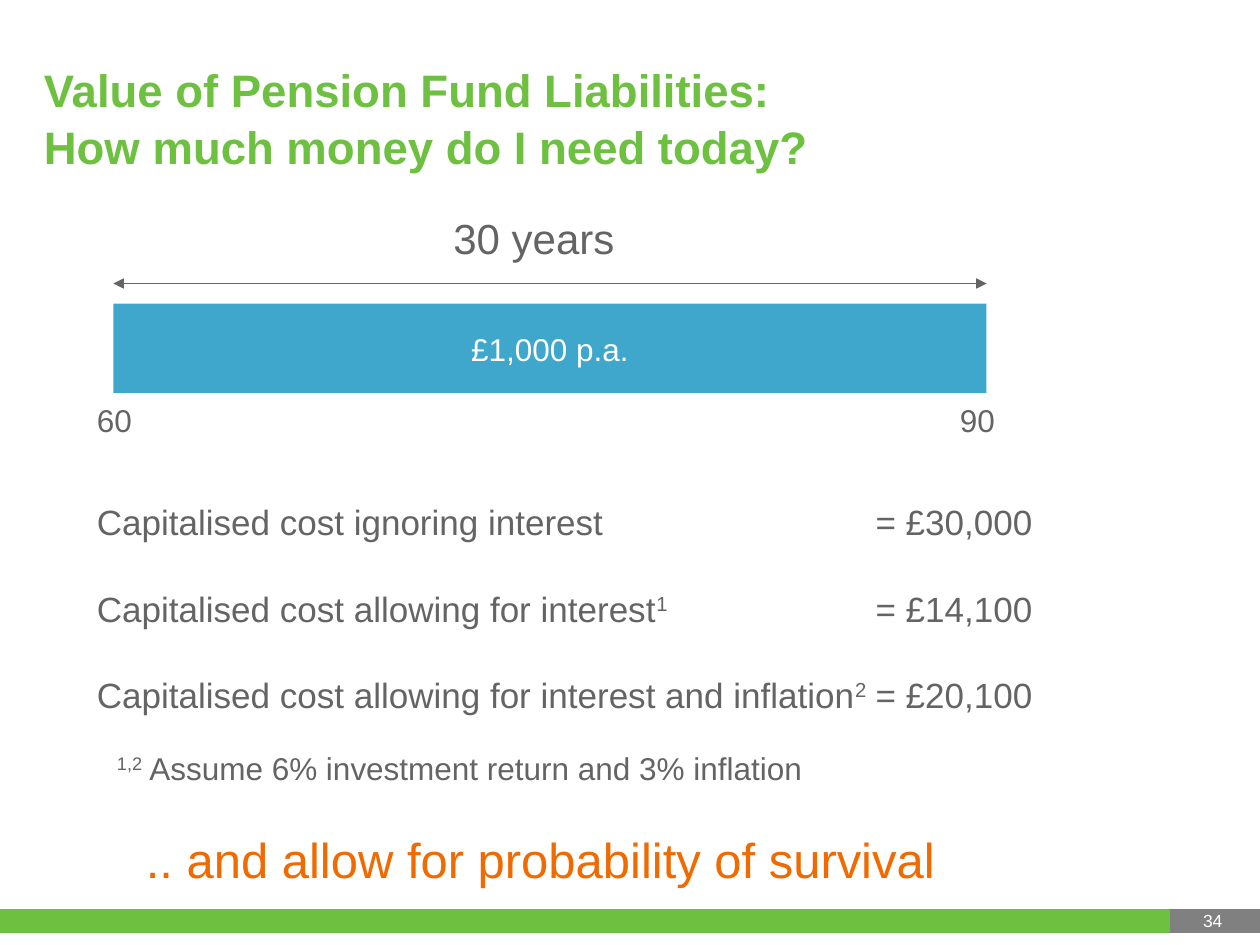
from dataclasses import dataclass

from lxml import etree
from pptx import Presentation
from pptx.dml.color import RGBColor
from pptx.enum.shapes import MSO_CONNECTOR, MSO_SHAPE
from pptx.enum.text import MSO_ANCHOR, PP_ALIGN
from pptx.oxml.ns import qn
from pptx.util import Inches, Pt

LEFT, CENTER, RIGHT = PP_ALIGN.LEFT, PP_ALIGN.CENTER, PP_ALIGN.RIGHT
TOP, MIDDLE, BOTTOM = MSO_ANCHOR.TOP, MSO_ANCHOR.MIDDLE, MSO_ANCHOR.BOTTOM


@dataclass(frozen=True)
class Theme:
    font: str = "Arial"
    green: str = "6EC040"
    blue: str = "3FA6CC"
    orange: str = "F06A00"
    text: str = "646464"
    gray: str = "808080"
    white: str = "FFFFFF"
    title: int = 26
    closing: int = 28
    span: int = 24
    cost: int = 20
    label: int = 18
    number: int = 10
    leading: float = 1.05


THEME = Theme()


def apply(target, values):
    for name, value in values.items():
        setattr(target, name, value)


def add_span(para, text, size, color, bold=False, raised=False):
    span = para.add_run()
    span.text = text
    apply(span.font, {"name": THEME.font, "size": Pt(size), "bold": bold})
    span.font.color.rgb = RGBColor.from_string(color)
    if raised:
        span.font._element.set("baseline", "30000")


def format_para(para, align=LEFT):
    apply(para, {"alignment": align, "line_spacing": THEME.leading})


def add_text(page, box, text, size, color, align=LEFT, anchor=TOP, bold=False):
    frame = page.shapes.add_textbox(*map(Inches, box)).text_frame
    apply(frame, {"word_wrap": True, "vertical_anchor": anchor})
    para = frame.paragraphs[0]
    format_para(para, align)
    for index, line in enumerate(text.splitlines()):
        if index:
            para.add_line_break()
        add_span(para, line, size, color, bold)
    return para


def add_bar(page, box, color, outlined=False):
    bar = page.shapes.add_shape(MSO_SHAPE.RECTANGLE, *map(Inches, box))
    bar.shadow.inherit = False
    bar.fill.solid()
    bar.fill.fore_color.rgb = RGBColor.from_string(color)
    if outlined:
        bar.line.color.rgb = RGBColor.from_string(color)
        bar.line.width = Pt(2)
    else:
        bar.line.fill.background()
    return bar


def add_double_arrow(page, left, right, y):
    arrow = page.shapes.add_connector(
        MSO_CONNECTOR.STRAIGHT, Inches(left), Inches(y), Inches(right), Inches(y))
    arrow.line.color.rgb = RGBColor.from_string(THEME.text)
    arrow.line.width = Pt(0.75)
    for end in ("a:headEnd", "a:tailEnd"):
        etree.SubElement(arrow.line._get_or_add_ln(), qn(end), type="triangle")
    etree.SubElement(arrow._element.spPr, qn("a:effectLst"))


def add_footer(page, box, number):
    left, top, width, height = box
    number_width = 0.83
    number_left = left + width - number_width
    add_bar(page, (number_left, top, number_width, height), THEME.gray, True)
    add_bar(page, (left, top, number_left + 0.1, height), THEME.green, True)
    add_text(page, (number_left, top - 0.38, 0.63, 0.59), number,
             THEME.number, THEME.white, RIGHT, BOTTOM)


def add_timeline(page, box):
    left, top, width, height = box
    right, bottom = left + width, top + height
    bar_top = top + 0.79
    add_text(page, (left + 2.6, top, 1.6, 0.5), "30 years", THEME.span, THEME.text)
    add_double_arrow(page, left, right, top + 0.63)
    frame = add_bar(page, (left, bar_top, width, bottom - bar_top), THEME.blue).text_frame
    frame.vertical_anchor = MIDDLE
    format_para(frame.paragraphs[0], CENTER)
    add_span(frame.paragraphs[0], "£1,000 p.a.", THEME.label, THEME.white)
    for age, x in (("60", left - 0.23), ("90", right - 0.31)):
        add_text(page, (x, bottom, 0.64, 0.57), age, THEME.label, THEME.text)


def add_costs(page, box, costs, value_left):
    frame = page.shapes.add_textbox(*map(Inches, box)).text_frame
    frame.word_wrap = True
    for index, (label, mark, value) in enumerate(costs):
        para = frame.add_paragraph() if index else frame.paragraphs[0]
        format_para(para)
        if index:
            para.space_before = Pt(24)
        tabs = etree.SubElement(para._p.get_or_add_pPr(), qn("a:tabLst"))
        etree.SubElement(tabs, qn("a:tab"), pos=str(Inches(value_left)), algn="l")
        add_span(para, label, THEME.cost, THEME.text)
        if mark:
            add_span(para, mark, THEME.cost, THEME.text, raised=True)
        add_span(para, f"\t= {value}", THEME.cost, THEME.text)


def add_footnote(page, box, mark, text):
    para = add_text(page, box, "", THEME.label, THEME.text)
    add_span(para, mark, THEME.label, THEME.text, raised=True)
    add_span(para, f" {text}", THEME.label, THEME.text)


def main():
    deck = Presentation()
    apply(deck, {"slide_width": Inches(10), "slide_height": Inches(7.5)})
    page = deck.slides.add_slide(deck.slide_layouts[6])
    add_footer(page, (0, 7.23, 10, 0.16), "34")
    add_text(page, (0.25, 0.3, 9, 1.25),
             "Value of Pension Fund Liabilities:\nHow much money do I need today?",
             THEME.title, THEME.green, anchor=MIDDLE, bold=True)
    add_timeline(page, (0.9, 1.62, 6.93, 1.5))
    add_costs(page, (0.67, 3.91, 8.51, 1.77), (
        ("Capitalised cost ignoring interest", "", "£30,000"),
        ("Capitalised cost allowing for interest", "1", "£14,100"),
        ("Capitalised cost allowing for interest and inflation", "2", "£20,100"),
    ), 6.18)
    add_footnote(page, (0.83, 5.88, 6, 0.4), "1,2",
                 "Assume 6% investment return and 3% inflation")
    add_text(page, (1.06, 6.51, 7, 0.57), ".. and allow for probability of survival",
             THEME.closing, THEME.orange)
    deck.save("out.pptx")


if __name__ == "__main__":
    main()
